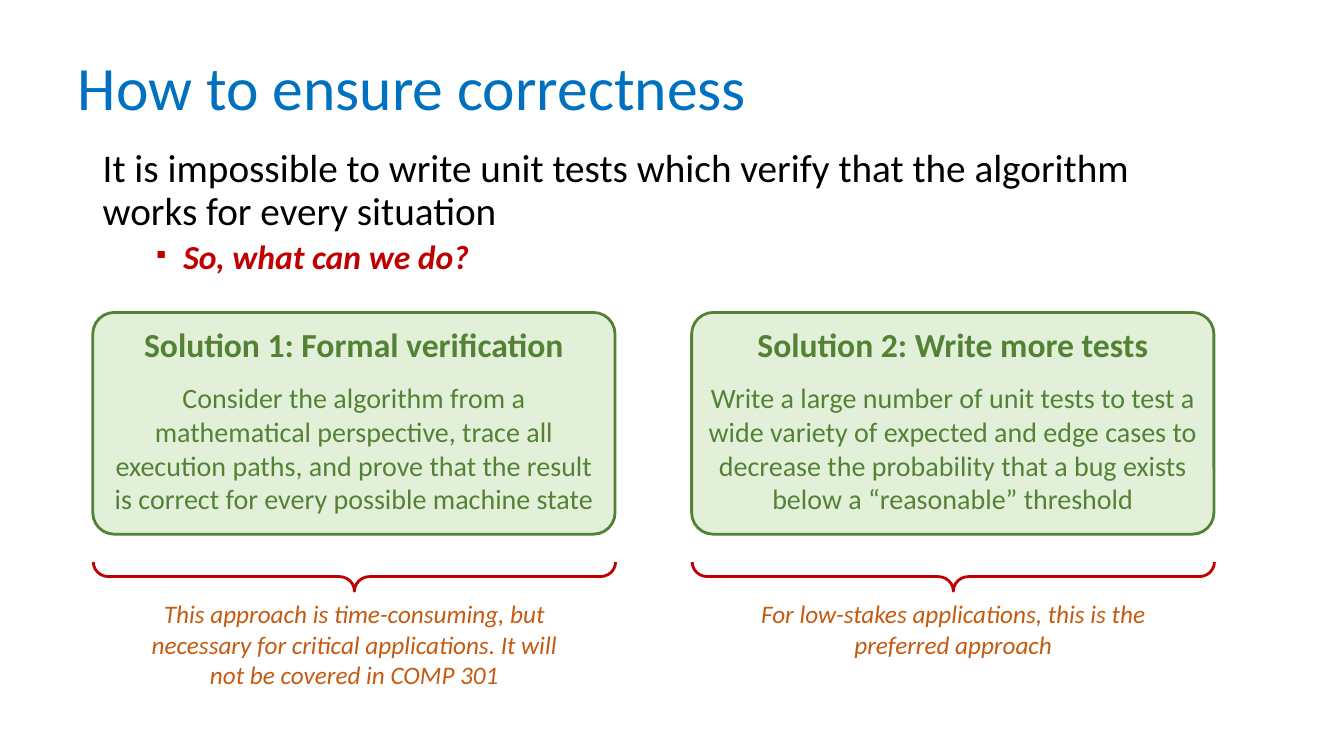
from dataclasses import dataclass

from lxml import etree
from pptx import Presentation
from pptx.dml.color import RGBColor
from pptx.enum.shapes import MSO_SHAPE
from pptx.enum.text import MSO_ANCHOR, MSO_AUTO_SIZE, PP_ALIGN
from pptx.oxml.ns import qn
from pptx.shapes.autoshape import Shape
from pptx.shapes.shapetree import GroupShapes, SlideShapes
from pptx.slide import Slide
from pptx.text.text import TextFrame, _Paragraph
from pptx.util import Pt

PX = 9144
FONT = "Calibri"
BLUE = RGBColor(0x00, 0x70, 0xC0)
BLACK = RGBColor(0x00, 0x00, 0x00)
RED = RGBColor(0xC0, 0x00, 0x00)
GREEN = RGBColor(0x54, 0x82, 0x35)
PALE = RGBColor(0xE2, 0xF0, 0xD9)
RUST = RGBColor(0xC5, 0x5A, 0x11)

ROUND = MSO_SHAPE.ROUNDED_RECTANGLE
BRACE = MSO_SHAPE.RIGHT_BRACE
LEFT = PP_ALIGN.LEFT
CENTER = PP_ALIGN.CENTER
TOP = MSO_ANCHOR.TOP
MIDDLE = MSO_ANCHOR.MIDDLE
FIXED = MSO_AUTO_SIZE.NONE
GROW = MSO_AUTO_SIZE.SHAPE_TO_FIT_TEXT

CARD_LEFT, CARD_TOP, CARD_W, CARD_H = 92, 310, 518, 220
PITCH = 594
BRACE_W, BRACE_MID = 29, 572
NOTE_TOP, NOTE_W = 589, 423


@dataclass(frozen=True)
class Card:
    head: str
    body: str
    note: str
    note_h: int


CARDS = (
    Card(
        "Solution 1: Formal verification",
        "Consider the algorithm from a mathematical perspective, trace all "
        "execution paths, and prove that the result is correct for every "
        "possible machine state",
        "This approach is time-consuming, but necessary for critical "
        "applications. It will not be covered in COMP 301",
        101,
    ),
    Card(
        "Solution 2: Write more tests",
        "Write a large number of unit tests to test a wide variety of expected "
        "and edge cases to decrease the probability that a bug exists below a "
        "“reasonable” threshold",
        "For low-stakes applications, this is the preferred approach",
        71,
    ),
)


def px(*sizes: int) -> list[int]:
    return [size * PX for size in sizes]


def add_run(para: _Paragraph, text: str, size: int, color: RGBColor,
            bold: bool = False, italic: bool = False) -> None:
    run = para.add_run()
    run.text = text
    font = run.font
    font.name = FONT
    font.size = Pt(size)
    font.color.rgb = color
    font.bold = bold
    font.italic = italic


def add_text(shapes: SlideShapes | GroupShapes, *box: int) -> TextFrame:
    frame = shapes.add_textbox(*px(*box)).text_frame
    frame.word_wrap = True
    return frame


def set_bullet(para: _Paragraph, color: RGBColor) -> None:
    props = para._p.get_or_add_pPr()
    props.set("marL", str(80 * PX))
    props.set("indent", str(-30 * PX))
    tint = etree.SubElement(props, qn("a:buClr"))
    etree.SubElement(tint, qn("a:srgbClr"), val=str(color))
    etree.SubElement(props, qn("a:buSzPct"), val="65000")
    etree.SubElement(props, qn("a:buChar"), char="▪")


def set_line(shape: Shape, color: RGBColor) -> None:
    shape.shadow.inherit = False
    shape.line.color.rgb = color
    shape.line.width = Pt(2)


def draw_title(slide: Slide) -> None:
    title = slide.shapes.title
    title.left, title.top, title.width, title.height = px(67, 40, 984, 100)
    frame = title.text_frame
    frame.auto_size = FIXED
    frame.vertical_anchor = MIDDLE
    para = frame.paragraphs[0]
    para.alignment = LEFT
    para.line_spacing = 0.9
    add_run(para, "How to ensure correctness", 44, BLUE)


def draw_intro(slide: Slide) -> None:
    frame = add_text(slide.shapes, 92, 143, 1061, 156)
    lead = frame.paragraphs[0]
    lead.line_spacing = 0.9
    lead.space_before = Pt(24)
    add_run(lead, "It is impossible to write unit tests which verify that the "
            "algorithm works for every situation", 28, BLACK)
    ask = frame.add_paragraph()
    ask.level = 1
    ask.line_spacing = 0.9
    ask.space_before = Pt(5)
    set_bullet(ask, RED)
    add_run(ask, "So, what can we do?", 24, RED, bold=True, italic=True)


def draw_card(slide: Slide, card: Card, left: int) -> None:
    box = slide.shapes.add_shape(ROUND, *px(left, CARD_TOP, CARD_W, CARD_H))
    box.adjustments[0] = 0.097
    box.fill.solid()
    box.fill.fore_color.rgb = PALE
    set_line(box, GREEN)
    frame = box.text_frame
    frame.word_wrap = True
    frame.vertical_anchor = TOP
    head = frame.paragraphs[0]
    head.alignment = CENTER
    head.space_after = Pt(12)
    add_run(head, card.head, 24, GREEN, bold=True)
    body = frame.add_paragraph()
    body.alignment = CENTER
    add_run(body, card.body, 20, GREEN)


def draw_note(slide: Slide, card: Card, left: int) -> None:
    shapes = slide.shapes.add_group_shape().shapes
    mid = left + CARD_W // 2
    brace = shapes.add_shape(BRACE, *px(
        mid - BRACE_W // 2, BRACE_MID - CARD_W // 2, BRACE_W, CARD_W))
    brace.rotation = 90
    brace.adjustments[0] = 0.518
    brace.adjustments[1] = 0.5
    brace.fill.background()
    set_line(brace, RED)
    frame = add_text(shapes, mid - NOTE_W // 2, NOTE_TOP, NOTE_W, card.note_h)
    frame.auto_size = GROW
    para = frame.paragraphs[0]
    para.alignment = CENTER
    add_run(para, card.note, 18, RUST, italic=True)


def main() -> None:
    deck = Presentation()
    deck.slide_width, deck.slide_height = px(1333, 750)
    slide = deck.slides.add_slide(deck.slide_layouts.get_by_name("Title Only"))
    draw_title(slide)
    draw_intro(slide)
    for draw in (draw_card, draw_note):
        for index, card in enumerate(CARDS):
            draw(slide, card, CARD_LEFT + index * PITCH)
    deck.save("out.pptx")


if __name__ == "__main__":
    main()
